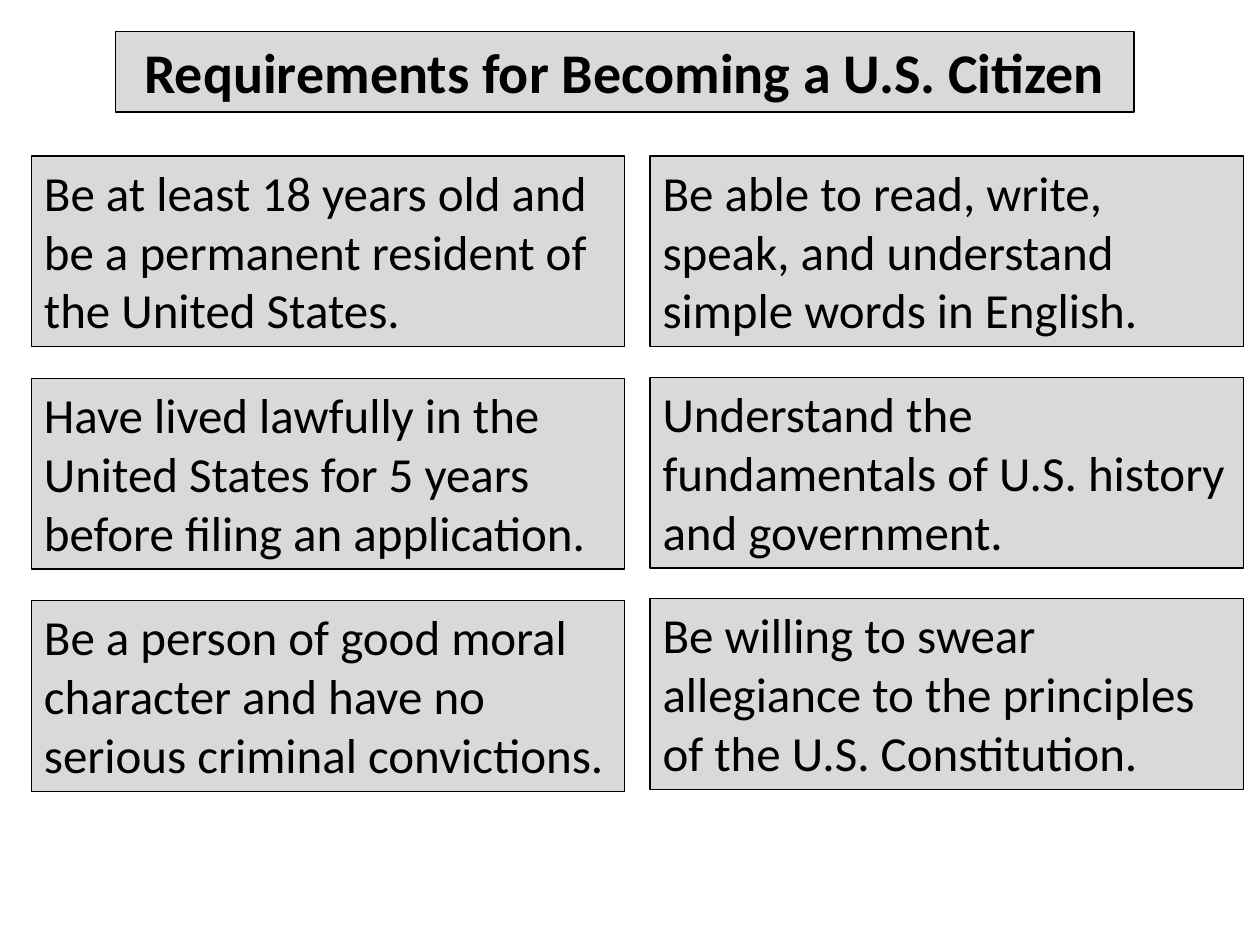
"""Build a slide listing the requirements for becoming a U.S. citizen."""
from pptx import Presentation
from pptx.dml.color import RGBColor
from pptx.enum.text import MSO_ANCHOR, MSO_AUTO_SIZE, PP_ALIGN
from pptx.util import Pt

TITLE = "Requirements for Becoming a U.S. Citizen"
COLUMNS = [
    {
        "left": 18,
        "row_pitch": 127,
        "requirements": [
            "Be at least 18 years old and be a permanent resident of the United States.",
            "Have lived lawfully in the United States for 5 years before filing an application.",
            "Be a person of good moral character and have no serious criminal convictions.",
        ],
    },
    {
        "left": 371.5,
        "row_pitch": 126.4,
        "requirements": [
            "Be able to read, write, speak, and understand simple words in English.",
            "Understand the fundamentals of U.S. history and government.",
            "Be willing to swear allegiance to the principles of the U.S. Constitution.",
        ],
    },
]
FIRST_ROW_TOP = 89.2
CARD_WIDTH, CARD_HEIGHT = 339, 109


def color(value):
    return RGBColor.from_string(value)


def add_card(slide, text, left, top, width, height, size=28, bold=False, alignment=PP_ALIGN.LEFT):
    shape = slide.shapes.add_textbox(Pt(left), Pt(top), Pt(width), Pt(height))
    shape.fill.solid()
    shape.fill.fore_color.rgb = color("D9D9D9")
    shape.line.color.rgb = color("000000")
    shape.line.width = Pt(0.75)
    frame = shape.text_frame
    frame.word_wrap = True
    frame.auto_size = MSO_AUTO_SIZE.SHAPE_TO_FIT_TEXT
    frame.vertical_anchor = MSO_ANCHOR.TOP
    paragraph = frame.paragraphs[0]
    paragraph.text = text
    paragraph.alignment = alignment
    paragraph.font.name = "Calibri"
    paragraph.font.size = Pt(size)
    paragraph.font.bold = bold
    paragraph.font.color.rgb = color("000000")


def main():
    presentation = Presentation()
    presentation.slide_width, presentation.slide_height = Pt(720), Pt(540)
    slide = presentation.slides.add_slide(presentation.slide_layouts[6])
    add_card(slide, TITLE, 66, 18, 582, 46, size=32, bold=True, alignment=PP_ALIGN.CENTER)
    for column in COLUMNS:
        for row, requirement in enumerate(column["requirements"]):
            top = FIRST_ROW_TOP + row * column["row_pitch"]
            add_card(slide, requirement, column["left"], top, CARD_WIDTH, CARD_HEIGHT)
    presentation.save("out.pptx")


if __name__ == "__main__":
    main()
